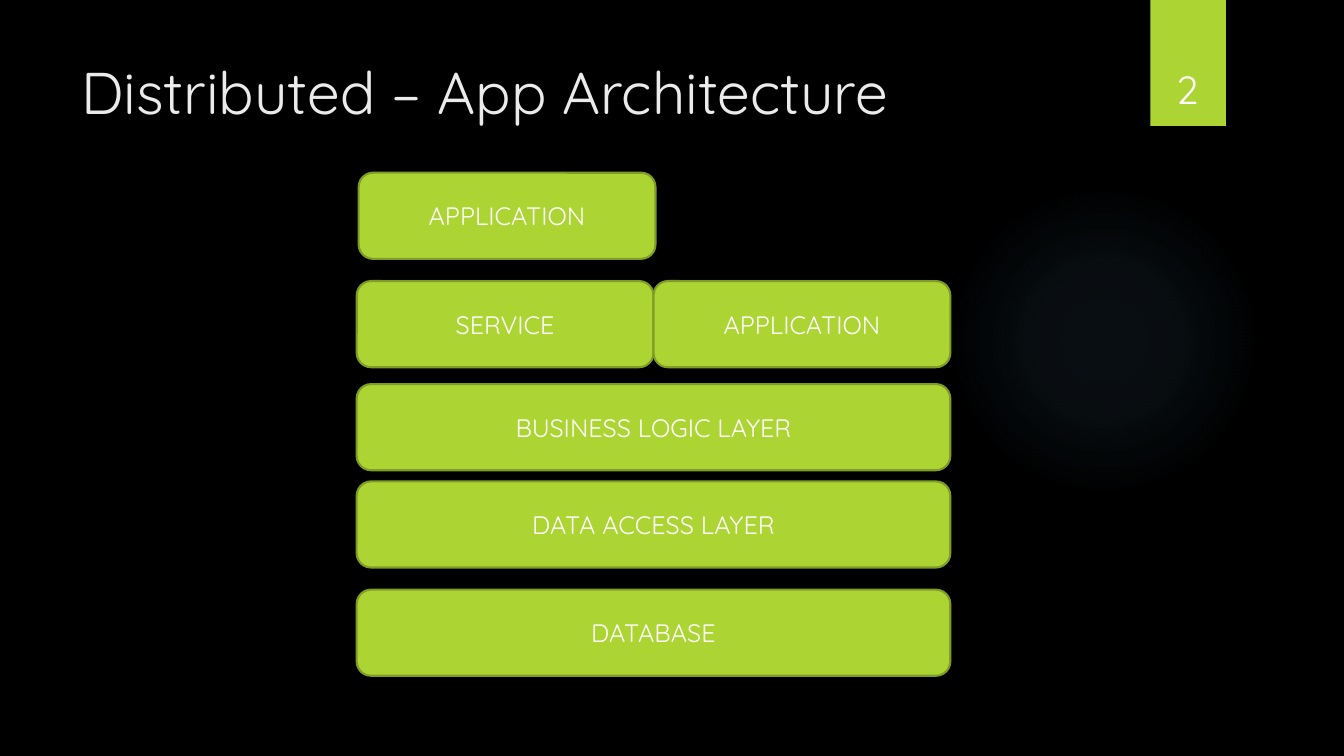
from pptx import Presentation
from pptx.dml.color import RGBColor
from pptx.enum.shapes import MSO_SHAPE
from pptx.enum.text import MSO_ANCHOR, PP_ALIGN
from pptx.oxml import parse_xml
from pptx.oxml.ns import nsdecls, qn
from pptx.util import Pt

RECT, ROUND, OVAL = MSO_SHAPE.RECTANGLE, MSO_SHAPE.ROUNDED_RECTANGLE, MSO_SHAPE.OVAL
TOP, MIDDLE, BOTTOM = MSO_ANCHOR.TOP, MSO_ANCHOR.MIDDLE, MSO_ANCHOR.BOTTOM
LEFT, CENTER = PP_ALIGN.LEFT, PP_ALIGN.CENTER


def rgb(value):
    return RGBColor.from_string(value)


class Deck:
    """Holds the style and the current slide, and draws its elements."""

    font = "Quicksand"
    green, edge, white = "ACD433", "7F9D26", "FFFFFF"

    def __init__(self, slide, background):
        self.s = slide
        slide.background.fill.solid()
        slide.background.fill.fore_color.rgb = rgb(background)

    def label(self, sp, text, size, color, align, anchor):
        tf = sp.text_frame
        tf.word_wrap = True
        tf.vertical_anchor = anchor
        p = tf.paragraphs[0]
        p.alignment = align
        r = p.add_run()
        r.text = text
        for name, value in {"name": self.font, "size": Pt(size)}.items():
            setattr(r.font, name, value)
        r.font.color.rgb = rgb(color)

    def shape(self, kind, x, y, w, h):
        sp = self.s.shapes.add_shape(kind, Pt(x), Pt(y), Pt(w), Pt(h))
        sp.shadow.inherit = False
        sp.fill.solid()
        sp.fill.fore_color.rgb = rgb(self.green)
        sp.line.fill.background()
        return sp

    def text(self, text, x, y, w, h, size, color, align=LEFT, anchor=TOP):
        sp = self.s.shapes.add_textbox(Pt(x), Pt(y), Pt(w), Pt(h))
        self.label(sp, text, size, color, align, anchor)

    def layer(self, text, x, y, w, h):
        sp = self.shape(ROUND, x, y, w, h)
        sp.line.color.rgb = rgb(self.edge)
        sp.line.width = Pt(1.5)
        self.label(sp, text, 18, self.white, CENTER, MIDDLE)

    def glow(self, x, y, size, color, stops):
        sp = self.shape(OVAL, x, y, size, size)
        stop_xml = "".join(
            f'<a:gs pos="{pos * 1000}"><a:srgbClr val="{color}">'
            f'<a:alpha val="{alpha * 1000}"/></a:srgbClr></a:gs>'
            for pos, alpha in stops)
        grad = parse_xml(
            f'<a:gradFill {nsdecls("a")} rotWithShape="1"><a:gsLst>{stop_xml}</a:gsLst>'
            '<a:path path="circle"><a:fillToRect l="50000" t="50000" r="50000" b="50000"/>'
            '</a:path></a:gradFill>')
        props = sp.element.spPr
        props.replace(props.find(qn("a:solidFill")), grad)


def main():
    prs = Presentation()
    prs.slide_width, prs.slide_height = Pt(960), Pt(540)
    deck = Deck(prs.slides.add_slide(prs.slide_layouts[6]), "000000")

    deck.glow(677.5, 132, 221.8, "7AC4F0", [(0, 7), (36, 6), (69, 0)])
    deck.shape(RECT, 821.7, 0, 54, 90)
    deck.text("Distributed – App Architecture", 51, 36, 741, 110, 42, "EBEBEB")
    deck.text("2", 815, 23, 66.2, 60.5, 28, deck.white, CENTER, BOTTOM)

    left, full, height = 254.8, 424, 61.5
    half = full / 2
    layers = [
        ("DATABASE", left, 421.2, full),
        ("DATA ACCESS LAYER", left, 343.9, full),
        ("SERVICE", left, 200.8, half),
        ("APPLICATION", left + half, 200.8, half),
        ("APPLICATION", left + 1.4, 123.4, half),
        ("BUSINESS LOGIC LAYER", left, 274.4, full),
    ]
    for name, x, y, width in layers:
        deck.layer(name, x, y, width, height)

    prs.save("out.pptx")


if __name__ == "__main__":
    main()
